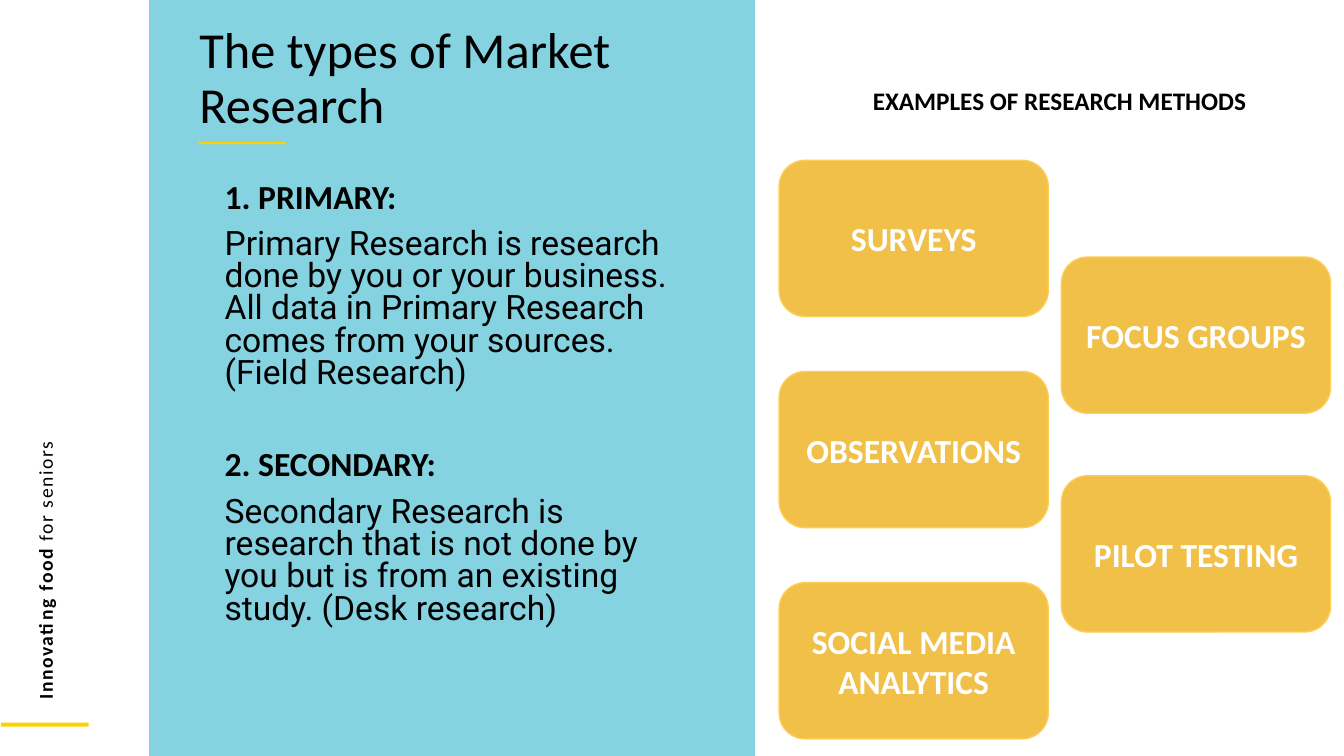
from pptx import Presentation
from pptx.dml.color import RGBColor
from pptx.enum.shapes import MSO_SHAPE
from pptx.enum.text import MSO_ANCHOR, PP_ALIGN
from pptx.util import Inches, Pt

RECTANGLE = MSO_SHAPE.RECTANGLE
CARD = MSO_SHAPE.FLOWCHART_ALTERNATE_PROCESS
MIDDLE = MSO_ANCHOR.MIDDLE
CENTER = PP_ALIGN.CENTER
COLUMNS, ROWS = 40, 30


def color(code):
    return RGBColor.from_string(code)


class Deck:
    ink, paper = "000000", "FFFFFF"
    panel, accent = "85D2E1", "FFD100"
    card_fill, card_edge = "F0C049", "FFCD54"
    heading_font, body_font = "Calibri", "Roboto"

    def __init__(self):
        self.prs = Presentation()
        self.prs.slide_width = Inches(13.33)
        self.prs.slide_height = Inches(7.5)
        self.slide = self.prs.slides.add_slide(self.prs.slide_layouts[6])

    def place(self, column, row, width, height):
        across = self.prs.slide_width / COLUMNS
        down = self.prs.slide_height / ROWS
        return [round(n) for n in (column * across, row * down, width * across, height * down)]

    def run(self, paragraph, words, size, bold=False, font=None, ink=None, tracking=0):
        run = paragraph.add_run()
        run.text = words
        run.font.name = font or self.heading_font
        run.font.size = Pt(size)
        run.font.bold = bold
        run.font.color.rgb = color(ink or self.ink)
        if tracking:
            run.font._element.set("spc", str(tracking))

    def block(self, area, fill, kind=RECTANGLE):
        block = self.slide.shapes.add_shape(kind, *self.place(*area))
        block.shadow.inherit = False
        block.fill.solid()
        block.fill.fore_color.rgb = color(fill)
        block.line.fill.background()
        return block

    def card(self, area, label):
        card = self.block(area, self.card_fill, CARD)
        card.line.color.rgb = color(self.card_edge)
        card.line.width = Pt(1)
        frame = card.text_frame
        frame.word_wrap = True
        frame.vertical_anchor = MIDDLE
        frame.paragraphs[0].alignment = CENTER
        self.run(frame.paragraphs[0], label, 24, True, ink=self.paper)

    def text(self, area, rotation=0):
        box = self.slide.shapes.add_textbox(*self.place(*area))
        box.rotation = rotation
        box.text_frame.word_wrap = True
        return box.text_frame

    def title(self, area, words):
        paragraph = self.text(area).paragraphs[0]
        paragraph.line_spacing = 0.9
        self.run(paragraph, words, 36)

    def caption(self, area, words):
        self.run(self.text(area).paragraphs[0], words, 18, True)

    def tagline(self, area, strong, light):
        paragraph = self.text(area, 270).paragraphs[0]
        self.run(paragraph, strong, 14, True, tracking=110)
        self.run(paragraph, light, 14, tracking=110)

    def definitions(self, area, entries):
        frame = self.text(area)
        for index, (term, meaning) in enumerate(entries):
            heading = frame.add_paragraph() if index else frame.paragraphs[0]
            explanation = frame.add_paragraph()
            heading.space_before = Pt(43 if index else 0)
            explanation.space_before = Pt(10)
            for paragraph in (heading, explanation):
                paragraph.line_spacing = 0.8
                paragraph._p.get_or_add_pPr().set("marL", str(Inches(0.25)))
            self.run(heading, term, 24, True)
            self.run(explanation, meaning, 24, font=self.body_font)


def main():
    deck = Deck()
    deck.block((4.44, 0, 18.03, ROWS), deck.panel)
    deck.block((0.03, 28.68, 2.61, 0.16), deck.accent)
    deck.block((5.91, 5.64, 2.61, 0.08), deck.accent)
    deck.tagline((-6.15, 17.48, 15, 1.36), "Innovating food ", "for seniors")
    deck.title((5.64, 0.8, 15.48, 5.12), "The types of Market Research")
    deck.definitions((5.64, 7.08, 15.15, 19.8), [
        ("1. PRIMARY:",
         "Primary Research is research done by you or your business. "
         "All data in Primary Research comes from your sources. (Field Research)"),
        ("2. SECONDARY:",
         "Secondary Research is research that is not done by you "
         "but is from an existing study. (Desk research)"),
    ])
    deck.caption((25.68, 3.2, 11.82, 1.6), "EXAMPLES OF RESEARCH METHODS")
    method_columns = [
        (23.19, 6.36, 8.38, ["SURVEYS", "OBSERVATIONS", "SOCIAL MEDIA ANALYTICS"]),
        (31.59, 10.2, 8.68, ["FOCUS GROUPS", "PILOT TESTING"]),
    ]
    for column, first_row, pitch, methods in method_columns:
        for index, method in enumerate(methods):
            deck.card((column, first_row + index * pitch, 8.01, 6.2), method)
    deck.prs.save("out.pptx")


if __name__ == "__main__":
    main()
